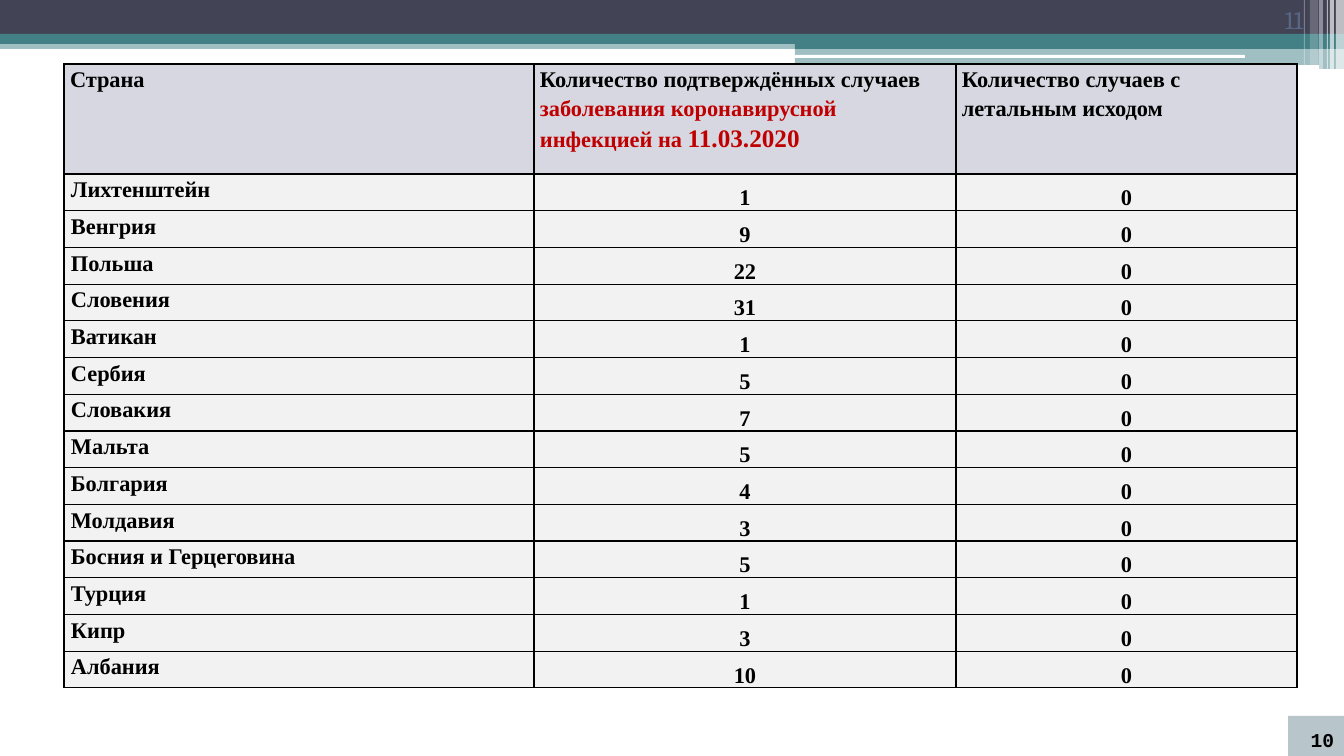
from lxml.etree import SubElement
from pptx import Presentation
from pptx.dml.color import RGBColor
from pptx.enum.shapes import MSO_SHAPE as Preset
from pptx.enum.text import MSO_ANCHOR as Anchor, PP_ALIGN as Align
from pptx.oxml.ns import qn
from pptx.util import Emu, Pt

COLORS = {
    "navy": "424456", "teal": "438086", "white": "FFFFFF", "black": "000000",
    "slate": "596784", "badge": "9BAFB5", "red": "C00000",
    "header": "D6D7E0", "body": "F2F2F2",
}
SERIF = {"name": "Times New Roman", "size": Pt(16), "bold": True}
PX_PER_INCH = 100.8


def px(length):
    return Emu(round(length * 914400 / PX_PER_INCH))


class SlideBuilder:
    def __init__(self, presentation):
        self.slide = presentation.slides.add_slide(presentation.slide_layouts[6])

    def paint(self, fill, color):
        fill.solid()
        fill.fore_color.rgb = RGBColor.from_string(COLORS[color])

    def bar(self, left, top, width, height, color, alpha=100, preset=Preset.RECTANGLE):
        shape = self.slide.shapes.add_shape(preset, px(left), px(top), px(width), px(height))
        shape.shadow.inherit = False
        shape.line.fill.background()
        self.paint(shape.fill, color)
        if alpha < 100:
            color_node = shape.element.spPr.find(qn("a:solidFill")).find(qn("a:srgbClr"))
            SubElement(color_node, qn("a:alpha"), val=str(alpha * 1000))
        return shape

    def add_runs(self, frame, runs, font, align, spacing=None):
        paragraph = frame.paragraphs[0]
        paragraph.alignment = align
        paragraph.line_spacing = spacing
        for text, color, changes in runs:
            run = paragraph.add_run()
            run.text = text
            for name, value in {**font, **changes}.items():
                setattr(run.font, name, value)
            run.font.color.rgb = RGBColor.from_string(COLORS[color])

    def number(self, frame, text, color, font):
        frame.word_wrap = True
        frame.vertical_anchor = Anchor.BOTTOM
        self.add_runs(frame, [(text, color, {})], font, Align.RIGHT)

    def text_box(self, left, top, width, height):
        return self.slide.shapes.add_textbox(px(left), px(top), px(width), px(height))

    def border(self, cell):
        properties = cell._tc.get_or_add_tcPr()
        for side in ("lnL", "lnR", "lnT", "lnB"):
            line = SubElement(properties, qn(f"a:{side}"), w=str(int(Pt(1))))
            fill = SubElement(line, qn("a:solidFill"))
            SubElement(fill, qn("a:srgbClr"), val=COLORS["black"])

    def cell(self, cell, runs, color, margin, anchor=Anchor.TOP, align=Align.LEFT):
        layout = {"margin_left": px(margin), "margin_right": px(margin),
                  "margin_top": 0, "margin_bottom": 0, "vertical_anchor": anchor}
        for name, value in layout.items():
            setattr(cell, name, value)
        self.border(cell)
        self.paint(cell.fill, color)
        self.add_runs(cell.text_frame, runs, SERIF, align, 1.15)

    def table(self, left, top, widths, header_height, body_height, headers, records):
        frame = self.slide.shapes.add_table(
            len(records) + 1, len(widths), px(left), px(top),
            px(sum(widths)), px(header_height + body_height))
        table = frame.table
        for column, width in zip(table.columns, widths):
            column.width = px(width)
        for row in table.rows:
            row.height = px(body_height / len(records))
        table.rows[0].height = px(header_height)
        for column, runs in enumerate(headers):
            self.cell(table.cell(0, column), runs, "header", 6)
        for row, record in enumerate(records, 1):
            for column, value in enumerate(record):
                place = (Anchor.BOTTOM, Align.CENTER) if column else (Anchor.TOP, Align.LEFT)
                self.cell(table.cell(row, column), [(str(value), "black", {})], "body", 7, *place)


HEADERS = [
    [("Страна", "black", {})],
    [("Количество подтверждённых случаев ", "black", {}),
     ("заболевания коронавирусной инфекцией на ", "red", {}),
     ("11.03.2020", "red", {"size": Pt(18)})],
    [("Количество случаев с летальным исходом", "black", {})],
]
CASES = {
    "Лихтенштейн": 1, "Венгрия": 9, "Польша": 22, "Словения": 31, "Ватикан": 1,
    "Сербия": 5, "Словакия": 7, "Мальта": 5, "Болгария": 4, "Молдавия": 3,
    "Босния и Герцеговина": 5, "Турция": 1, "Кипр": 3, "Албания": 10,
}
DEATHS = 0


def main():
    presentation = Presentation()
    presentation.slide_width, presentation.slide_height = px(1344), px(756)
    builder = SlideBuilder(presentation)

    # Top band
    for band in [(0, 40, 1344, 9, "teal", 50), (0, 0, 1344, 34, "navy"),
                 (0, 34, 1344, 10, "teal"), (795, 39, 549, 10, "teal"),
                 (795, 49, 549, 20, "teal", 50)]:
        builder.bar(*band)
    for left, top, width, height in [(795, 55, 450, 3), (1084, 65, 235, 4)]:
        builder.bar(left, top, width, height, "white", preset=Preset.ROUNDED_RECTANGLE)

    # Vertical stripes in the corner
    for left, width, height, alpha in [(1336, 8, 69, 65), (1330, 4, 69, 65), (1327, 1, 69, 60),
                                       (1319, 4, 69, 40), (1310, 8, 65, 20), (1304, 1, 65, 30)]:
        builder.bar(left, 0, width, height, "white", alpha)

    # Upper slide number
    upper_number = builder.text_box(1201, 0, 112, 40)
    builder.number(upper_number.text_frame, "11", "slate", {"name": "Cambria", "size": Pt(18)})

    # Cases by country
    records = [(country, count, DEATHS) for country, count in CASES.items()]
    builder.table(64, 64, (470, 422, 341), 110, 514, HEADERS, records)

    # Page badge
    badge = builder.bar(1288, 716, 56, 40, "badge", 70)
    builder.number(badge.text_frame, "10", "black",
                   {"name": "Courier New", "size": Pt(14), "bold": True})

    presentation.save("out.pptx")


if __name__ == "__main__":
    main()
